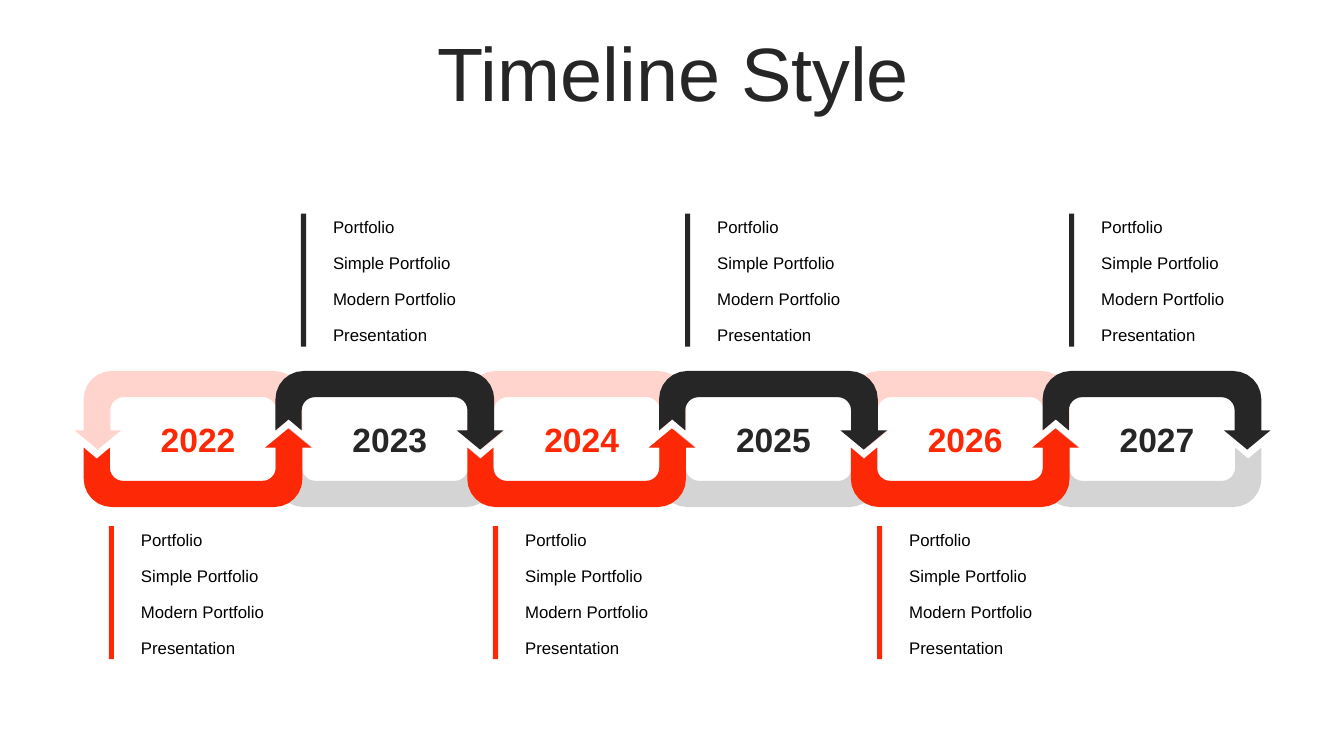
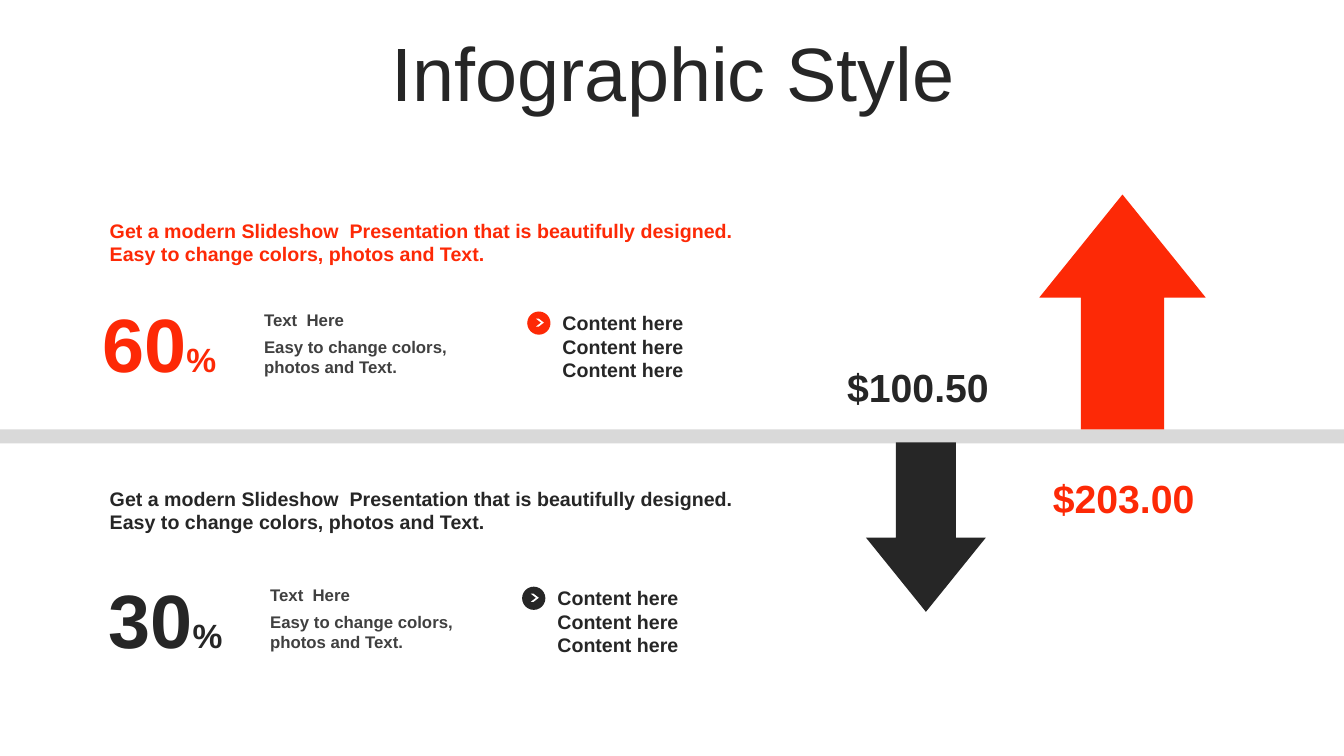
from dataclasses import dataclass
from math import cos, radians, sin

from pptx import Presentation
from pptx.dml.color import RGBColor as Rgb
from pptx.enum.shapes import MSO_SHAPE as Kind
from pptx.enum.text import MSO_ANCHOR as Anchor, PP_ALIGN as Align
from pptx.util import Inches, Pt

WIDTH, HEIGHT = Inches(13.333), Inches(7.5)
CELL = Inches(0.01)


@dataclass(frozen=True)
class Theme:
    font: str = "Arial"
    red: str = "FD2906"
    dark: str = "262626"
    pink: str = "FFD4CD"
    silver: str = "D4D4D4"
    band: str = "D9D9D9"
    grey: str = "404040"
    black: str = "000000"
    white: str = "FFFFFF"
    title: int = 54
    price: int = 28
    year: int = 24
    body: int = 14
    note: int = 12


THEME = Theme()


@dataclass(frozen=True)
class Box:
    """Place and size, in percent of the slide's width and height."""
    x: float
    y: float
    w: float
    h: float

    def emu(self) -> tuple[int, int, int, int]:
        return (share_x(self.x), share_y(self.y),
                share_x(self.w), share_y(self.h))


@dataclass(frozen=True)
class Style:
    size: int
    color: str
    bold: bool = True
    align: Align = Align.LEFT
    anchor: Anchor = Anchor.TOP
    line: float = 1.0
    gap: float = 0


@dataclass(frozen=True)
class Row:
    color: str
    num: str
    lead: float
    top: float
    left: float
    dot: float


@dataclass(frozen=True)
class Price:
    label: str
    color: str
    box: Box
    kind: Kind
    arrow: Box
    tint: str


YEARS = ("2022", "2023", "2024", "2025", "2026", "2027")
NOTES = ("Portfolio", "Simple Portfolio", "Modern Portfolio", "Presentation")
LEAD = ("Get a modern Slideshow  Presentation that is beautifully designed. "
        "Easy to change colors, photos and Text.")
ROWS = (
    Row(THEME.red, "60", 28.27, 38.67, 6.53, 39.23),
    Row(THEME.dark, "30", 63.73, 75.07, 6.98, 38.85),
)
PRICES = (
    Price("$203.00", THEME.red, Box(76.43, 62, 14.33, 7.6),
          Kind.UP_ARROW, Box(77.33, 25.73, 12.38, 31.07), THEME.red),
    Price("$100.50", THEME.dark, Box(61.13, 47.33, 14.33, 7.6),
          Kind.DOWN_ARROW, Box(64.43, 58.53, 8.93, 22.4), THEME.dark),
)


def share_x(part: float) -> int:
    return round(WIDTH * part / 100)


def share_y(part: float) -> int:
    return round(HEIGHT * part / 100)


def paint(shape, color: str) -> None:
    shape.shadow.inherit = False
    shape.fill.solid()
    shape.fill.fore_color.rgb = Rgb.from_string(color)
    shape.line.fill.background()


def block(slide, kind: Kind, box: Box, color: str, *adjust: float) -> None:
    shape = slide.shapes.add_shape(kind, *box.emu())
    for at, value in enumerate(adjust):
        shape.adjustments[at] = value
    paint(shape, color)


def write(slide, box: Box, style: Style, *lines: str):
    """Add a text box with one paragraph a line; return its text frame."""
    frame = slide.shapes.add_textbox(*box.emu()).text_frame
    frame.word_wrap = True
    frame.vertical_anchor = style.anchor
    for at, line in enumerate(lines):
        para = frame.add_paragraph() if at else frame.paragraphs[0]
        para.add_run().text = line
        para.alignment = style.align
        para.line_spacing = style.line
        if at and style.gap:
            para.space_before = Pt(style.gap)
        font = para.font
        font.name, font.size, font.bold = THEME.font, Pt(style.size), style.bold
        font.color.rgb = Rgb.from_string(style.color)
    return frame


def start(deck, title: str):
    """Add a blank slide with the shared title."""
    slide = deck.slides.add_slide(deck.slide_layouts[6])
    style = Style(THEME.title, THEME.dark, False, Align.CENTER,
                  Anchor.MIDDLE, 0.9)
    write(slide, Box(2.63, 4.93, 94.95, 10.53), style, title)
    return slide


def arc(x: float, y: float, r: float, a: int, b: int) -> list:
    """Points of a circle from angle a to angle b, in six equal steps."""
    turns = [radians(a + (b - a) * k / 6) for k in range(7)]
    return [(x + r * cos(t), y + r * sin(t)) for t in turns]


LINK_W, LINK_H = 217, 135
LINK = [
    (203, 78), (226, 59), (217, 59),
    *arc(189, 28, 28, 0, -90), *arc(28, 28, 28, -90, -180),
    (0, 59), (13, 48), (26, 59),
    *arc(39, 39, 13, 180, 270), *arc(177.5, 39, 13, 270, 360),
    (190.5, 59), (180, 59),
]


def link(slide, left: float, color: str, flip: bool, mirror: bool) -> None:
    """Draw half a chain link, turned over and mirrored on demand."""
    dots = [(share_x(left) + CELL * (LINK_W - x if mirror else x),
             share_y(49.07) + CELL * (LINK_H - y if flip else y))
            for x, y in LINK]
    pen = slide.shapes.build_freeform(*dots[0], scale=1.0)
    pen.add_line_segments(dots[1:], close=True)
    paint(pen.convert_to_shape(), color)


def timeline(deck) -> None:
    slide = start(deck, "Timeline Style")
    lefts = [6.23 + 14.27 * at for at in range(len(YEARS))]
    for at, left in enumerate(lefts):
        up = at % 2 == 1
        link(slide, left, THEME.silver if up else THEME.pink, up, True)
    note = Style(THEME.note, THEME.black, False, line=0.8, gap=14.3)
    for at, (year, left) in enumerate(zip(YEARS, lefts)):
        up = at % 2 == 1
        color = THEME.dark if up else THEME.red
        link(slide, left, color, not up, False)
        write(slide, Box(left + 3.67, 54.67, 9.68, 6.67),
              Style(THEME.year, color, True, Align.CENTER, Anchor.MIDDLE), year)
        bar = Box(8.1 + 14.29 * at, 28.27 if up else 69.6, 0.38, 17.6)
        block(slide, Kind.RECTANGLE, bar, color)
        write(slide, Box(bar.x + 1.65, bar.y + 0.27, 11.78, bar.h), note, *NOTES)


def detail(slide, row: Row) -> None:
    """Draw one row: lead text, percentage, caption and marked list."""
    write(slide, Box(7.43, row.lead, 48.68, 7.6),
          Style(THEME.body, row.color), LEAD)
    frame = write(slide, Box(row.left, row.top, 10.65, 13.47),
                  Style(THEME.title, row.color, True, Align.CENTER), row.num)
    sign = frame.paragraphs[0].add_run()
    sign.text = "%"
    sign.font.size = Pt(THEME.year)
    left = row.left + 12.38
    write(slide, Box(left, row.top + 1.6, 15.53, 4),
          Style(THEME.note, THEME.grey, anchor=Anchor.MIDDLE), "Text  Here")
    write(slide, Box(left, row.top + 5.2, 15.53, 6.67),
          Style(THEME.note, THEME.grey), "Easy to change colors, photos and Text.")
    block(slide, Kind.OVAL, Box(row.dot, row.top + 2.53, 1.73, 3.07), row.color)
    block(slide, Kind.CHEVRON, Box(row.dot + 0.64, row.top + 3.47, 0.6, 1.07),
          THEME.white, 0.652)
    write(slide, Box(row.dot + 1.88, row.top + 1.73, 11.33, 10.8),
          Style(THEME.body, THEME.dark, anchor=Anchor.MIDDLE),
          *["Content here"] * 3)


def infographic(deck) -> None:
    slide = start(deck, "Infographic Style")
    block(slide, Kind.RECTANGLE, Box(0, 56.8, 100, 1.87), THEME.band)
    for item in PRICES:
        block(slide, item.kind, item.arrow, item.tint, 0.5, 0.619)
        write(slide, item.box, Style(THEME.price, item.color, True,
                                     Align.CENTER, Anchor.MIDDLE), item.label)
    for row in ROWS:
        detail(slide, row)


def main() -> None:
    deck = Presentation()
    deck.slide_width, deck.slide_height = WIDTH, HEIGHT
    timeline(deck)
    infographic(deck)
    deck.save("out.pptx")


if __name__ == "__main__":
    main()
